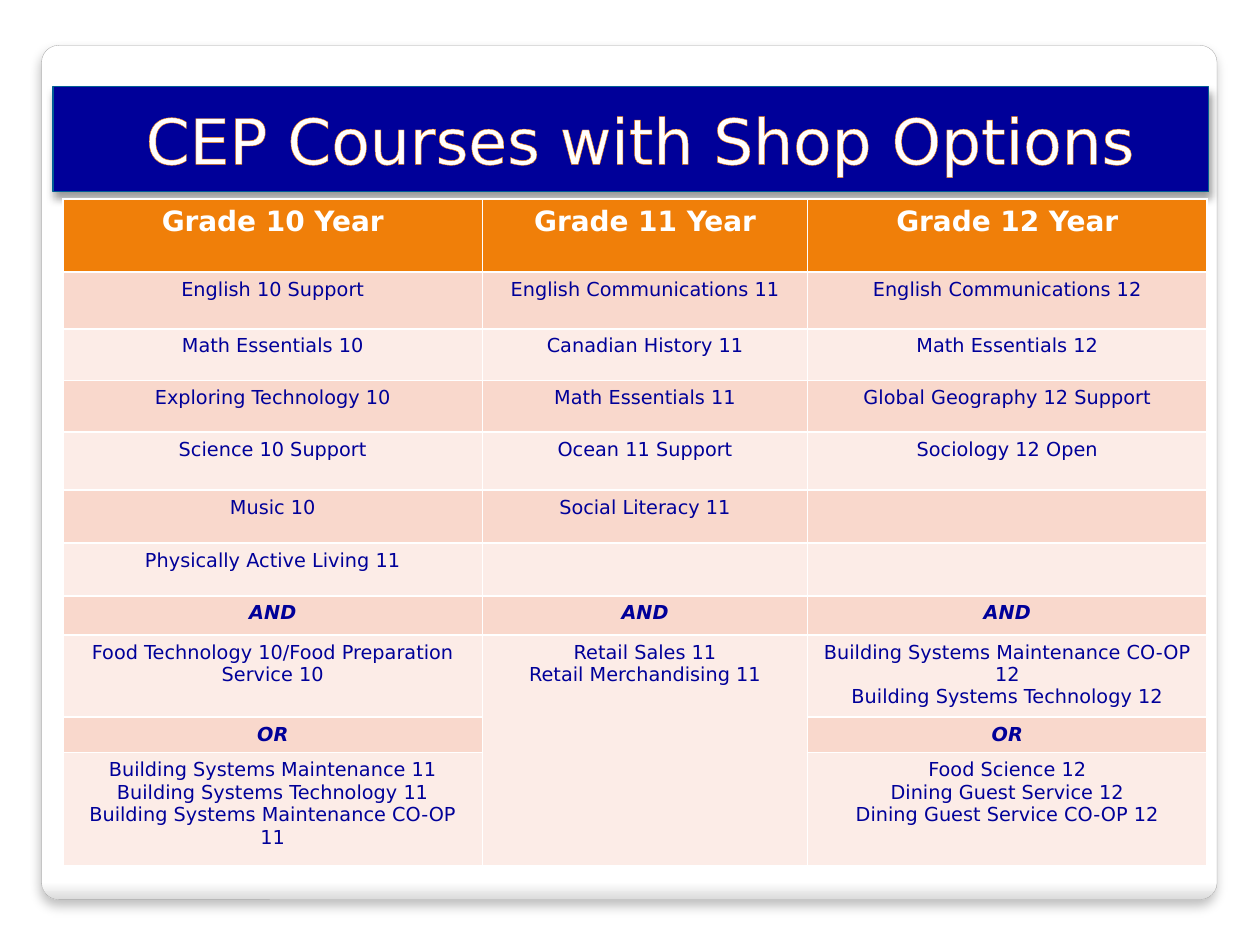
"""Builds the slide of CEP courses with shop options by grade."""
from lxml.etree import SubElement
from pptx import Presentation
from pptx.dml.color import RGBColor
from pptx.enum.shapes import MSO_SHAPE
from pptx.enum.text import MSO_ANCHOR, MSO_AUTO_SIZE, PP_ALIGN
from pptx.oxml import parse_xml
from pptx.oxml.ns import nsdecls, qn
from pptx.util import Inches, Pt

COLORS = {
    "white": "FFFFFF",
    "navy": "000099",
    "orange": "F07F09",
    "title_line": "035E94",
    "panel_line": "A4A4A4",
    "panel_edge": "DADADA",
    "band_dark": "F9D8CC",
    "band_light": "FCECE7",
    "shadow": "000000",
}
FONT = "DejaVu Sans"
CONNECTIVES = ("AND", "OR")
COLUMN_WIDTHS = [3.33, 2.58, 3.17]
ROW_HEIGHTS = [0.58, 0.45, 0.41, 0.41, 0.46, 0.42, 0.42, 0.31, 0.65, 0.28, 0.9]
COURSES = [
    ["Grade 10 Year", "Grade 11 Year", "Grade 12 Year"],
    ["English 10 Support", "English Communications 11", "English Communications 12"],
    ["Math Essentials 10", "Canadian History 11", "Math Essentials 12"],
    ["Exploring Technology 10", "Math Essentials 11", "Global Geography 12 Support"],
    ["Science 10 Support", "Ocean 11 Support", "Sociology 12 Open"],
    ["Music 10", "Social Literacy 11", ""],
    ["Physically Active Living 11", "", ""],
    ["AND", "AND", "AND"],
    [
        "Food Technology 10/Food Preparation Service 10",
        "Retail Sales 11\nRetail Merchandising 11",
        "Building Systems Maintenance CO-OP 12\nBuilding Systems Technology 12",
    ],
    ["OR", "", "OR"],
    [
        "Building Systems Maintenance 11\nBuilding Systems Technology 11\n"
        "Building Systems Maintenance CO-OP 11",
        "",
        "Food Science 12\nDining Guest Service 12\nDining Guest Service CO-OP 12",
    ],
]


def color(name):
    return RGBColor.from_string(COLORS[name])


def write_text(frame, text, size=11, fill="navy", bold=False, italic=False):
    for index, line in enumerate(text.split("\n")):
        paragraph = frame.add_paragraph() if index else frame.paragraphs[0]
        paragraph.alignment = PP_ALIGN.CENTER
        run = paragraph.add_run()
        run.text = line
        run.font.name = FONT
        run.font.size = Pt(size)
        run.font.bold = bold
        run.font.italic = italic
        run.font.color.rgb = color(fill)


class SlideBuilder:
    def __init__(self, presentation):
        self.slide = presentation.slides.add_slide(presentation.slide_layouts[5])

    def set_line(self, shape, name, width):
        shape.line.color.rgb = color(name)
        shape.line.width = Pt(width)

    def add_shadow(self, shape, blur, distance, opacity):
        shape.shadow.inherit = False
        effects = shape._element.spPr.find(qn("a:effectLst"))
        shadow = SubElement(
            effects, qn("a:outerShdw"), blurRad=str(Pt(blur)),
            dist=str(Pt(distance)), dir="5400000", algn="t", rotWithShape="0",
        )
        tint = SubElement(shadow, qn("a:srgbClr"), val=COLORS["shadow"])
        SubElement(tint, qn("a:alpha"), val=str(opacity * 1000))

    def add_panel(self, left, top, width, height):
        panel = self.slide.shapes.add_shape(
            MSO_SHAPE.ROUNDED_RECTANGLE,
            Inches(left), Inches(top), Inches(width), Inches(height),
        )
        panel.adjustments[0] = 0.02
        panel.fill.gradient()
        panel.fill.gradient_angle = 270
        start, end = panel.fill.gradient_stops
        start.color.rgb, start.position = color("white"), 0.98
        end.color.rgb, end.position = color("panel_edge"), 1
        self.set_line(panel, "panel_line", 0.16)
        self.add_shadow(panel, blur=6, distance=4, opacity=25)
        self.slide.shapes._spTree.insert(2, panel._element)

    def add_title(self, text, left, top, width, height):
        title = self.slide.shapes.title
        title.left, title.top = Inches(left), Inches(top)
        title.width, title.height = Inches(width), Inches(height)
        title.fill.solid()
        title.fill.fore_color.rgb = color("navy")
        self.set_line(title, "title_line", 0.75)
        self.add_shadow(title, blur=5.2, distance=3, opacity=40)
        frame = title.text_frame
        frame.word_wrap = True
        frame.auto_size = MSO_AUTO_SIZE.SHAPE_TO_FIT_TEXT
        frame.vertical_anchor = MSO_ANCHOR.MIDDLE
        write_text(frame, text, size=36, fill="white")
        outline = parse_xml(
            f'<a:ln {nsdecls("a")} w="{Pt(3)}"><a:solidFill>'
            f'<a:srgbClr val="{COLORS["orange"]}"/></a:solidFill></a:ln>'
        )
        frame.paragraphs[0].runs[0]._r.get_or_add_rPr().insert(0, outline)

    def add_course_table(self, left, top):
        table = self.slide.shapes.add_table(
            len(ROW_HEIGHTS), len(COLUMN_WIDTHS), Inches(left), Inches(top),
            Inches(sum(COLUMN_WIDTHS)), Inches(sum(ROW_HEIGHTS)),
        ).table
        for column, width in zip(table.columns, COLUMN_WIDTHS):
            column.width = Inches(width)
        for index, (row, height) in enumerate(zip(table.rows, ROW_HEIGHTS)):
            row.height = Inches(height)
            band = "band_dark" if index % 2 else "band_light"
            for cell, text in zip(row.cells, COURSES[index]):
                cell.fill.solid()
                cell.fill.fore_color.rgb = color(band if index else "orange")
                if not text:
                    continue
                if index == 0:
                    write_text(cell.text_frame, text, size=16, fill="white", bold=True)
                else:
                    strong = text in CONNECTIVES
                    write_text(cell.text_frame, text, bold=strong, italic=strong)
        table.cell(8, 1).merge(table.cell(10, 1))


def main():
    presentation = Presentation()
    presentation.slide_width, presentation.slide_height = Inches(10), Inches(7.5)
    builder = SlideBuilder(presentation)
    builder.add_panel(0.33, 0.36, 9.33, 6.78)
    builder.add_title(" CEP Courses with Shop Options", 0.42, 0.75, 9.17, 0.71)
    builder.add_course_table(0.5, 1.58)
    presentation.save("out.pptx")


if __name__ == "__main__":
    main()
